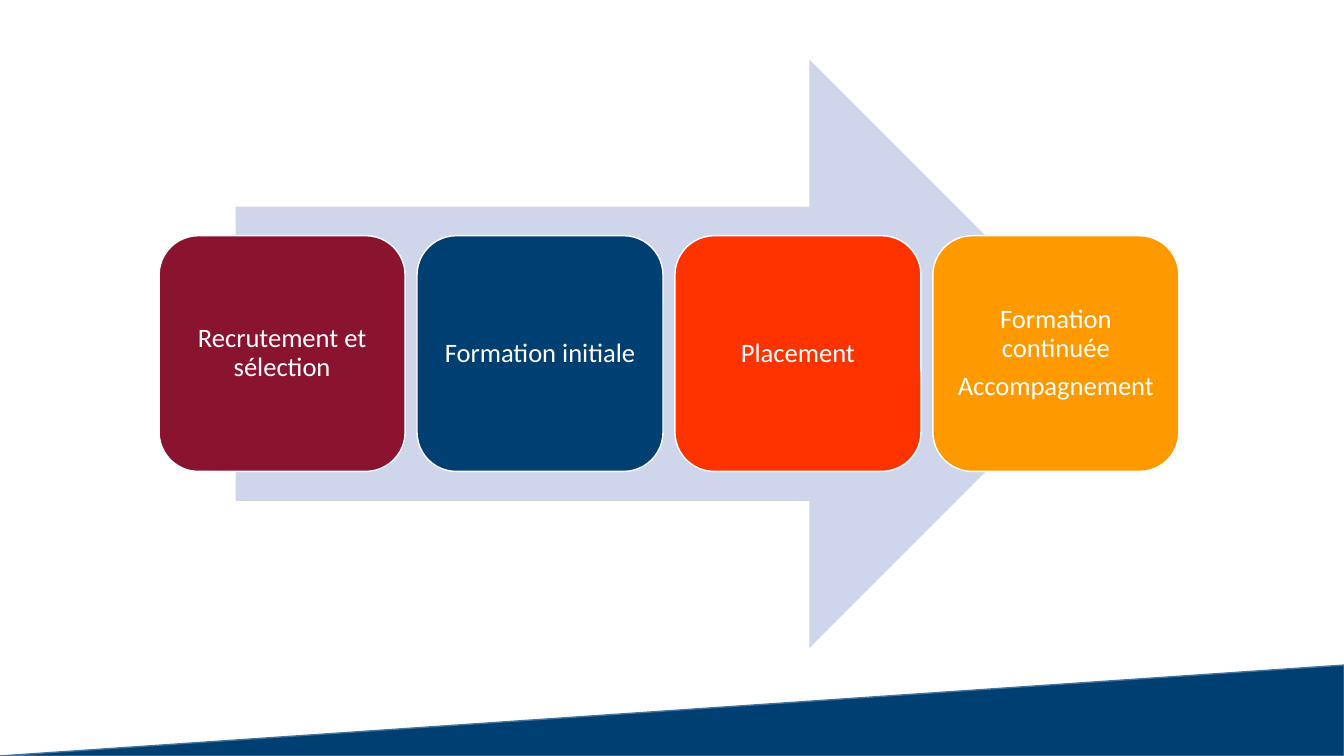
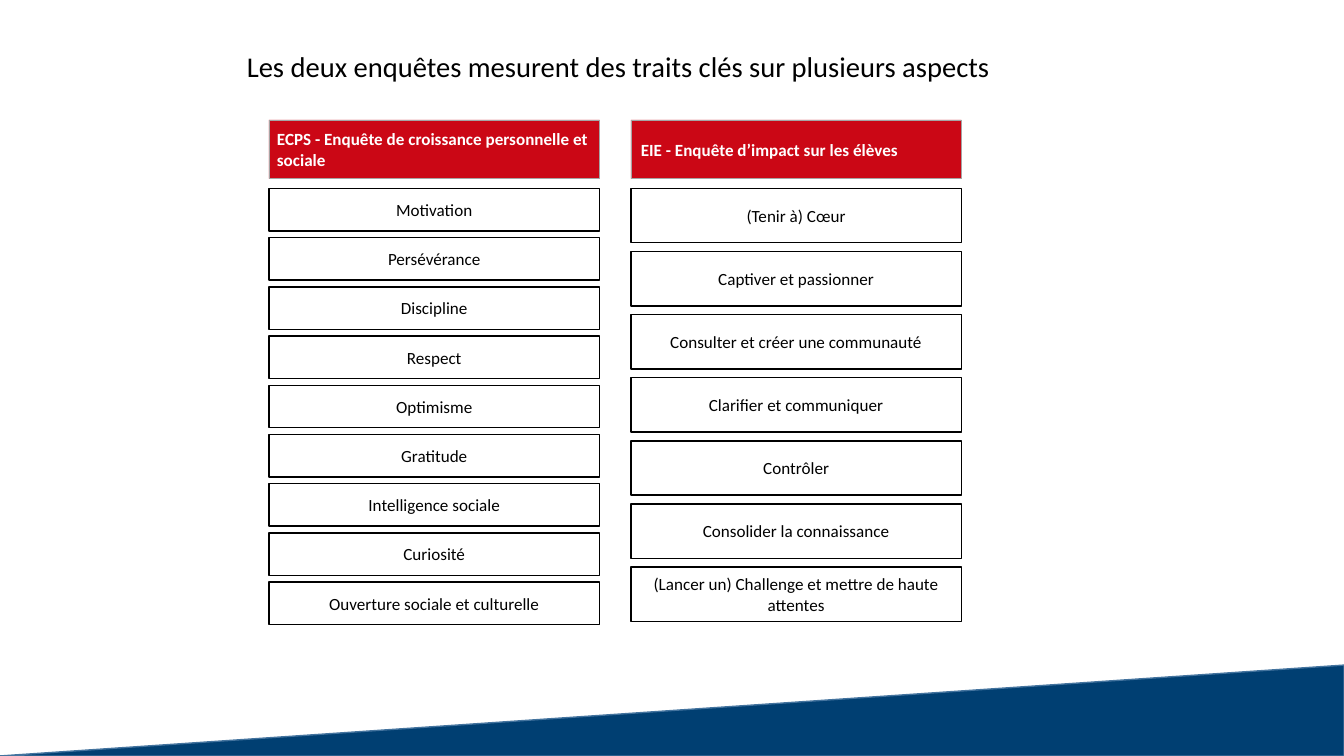
from dataclasses import dataclass

from pptx import Presentation
from pptx.dml.color import RGBColor
from pptx.enum.shapes import MSO_SHAPE as Shape
from pptx.enum.text import MSO_ANCHOR as Anchor, PP_ALIGN as Align
from pptx.util import Cm, Pt

FONT = "Calibri"
NAVY = RGBColor(0x00, 0x3F, 0x72)
BAND_EDGE = RGBColor(0x43, 0x73, 0x9E)
LAVENDER = RGBColor(0xCF, 0xD5, 0xEA)
BURGUNDY = RGBColor(0x8A, 0x13, 0x2F)
VERMILION = RGBColor(0xFF, 0x33, 0x00)
ORANGE = RGBColor(0xFF, 0x99, 0x00)
RED = RGBColor(0xCB, 0x07, 0x15)
GREY = RGBColor(0xA5, 0xA5, 0xA5)
WHITE = RGBColor(0xFF, 0xFF, 0xFF)
BLACK = RGBColor(0x00, 0x00, 0x00)

SLIDE_W, SLIDE_H = 33.87, 19.05
BAND_H = 2.29
STEP_LEFT, STEP_TOP, STEP_W, STEP_H, STEP_PITCH = 4.01, 5.94, 6.2, 5.94, 6.5
COLUMN_W, HEADER_TOP, HEADER_H, ROWS_TOP = 8.33, 3.02, 1.48, 4.75


@dataclass(frozen=True)
class Box:
    """Position and size in centimetres."""
    left: float
    top: float
    width: float
    height: float

    def lengths(self) -> tuple:
        return Cm(self.left), Cm(self.top), Cm(self.width), Cm(self.height)


@dataclass(frozen=True)
class TextStyle:
    size: float
    color: RGBColor
    bold: bool = False
    align: Align = Align.CENTER
    anchor: Anchor = Anchor.MIDDLE
    margins: tuple = (0.2, 0.1, 0.2, 0.1)
    line_spacing: float = 1.0
    space_after: float = 0


@dataclass(frozen=True)
class Step:
    text: str
    color: RGBColor


@dataclass(frozen=True)
class Survey:
    title: str
    left: float
    indent: float
    row_h: float
    pitch: float
    traits: tuple


TITLE_STYLE = TextStyle(20.4, BLACK, align=Align.LEFT, anchor=Anchor.BOTTOM,
                        margins=(0, 0, 0, 0))
STEP_STYLE = TextStyle(19, WHITE, margins=(0.2, 0.2, 0.2, 0.2),
                       line_spacing=0.9, space_after=6.65)
TRAIT_STYLE = TextStyle(12.2, BLACK)

STEPS = (
    Step("Recrutement et sélection", BURGUNDY),
    Step("Formation initiale", NAVY),
    Step("Placement", VERMILION),
    Step("Formation continuée\nAccompagnement", ORANGE),
)
SURVEYS = (
    Survey("ECPS - Enquête de croissance personnelle et sociale",
           6.78, 0.2, 1.07, 1.24,
           ("Motivation", "Persévérance", "Discipline", "Respect", "Optimisme",
            "Gratitude", "Intelligence sociale", "Curiosité",
            "Ouverture sociale et culturelle")),
    Survey("EIE - Enquête d’impact sur les élèves",
           15.9, 0.25, 1.37, 1.59,
           ("(Tenir à) Cœur", "Captiver et passionner",
            "Consulter et créer une communauté", "Clarifier et communiquer",
            "Contrôler", "Consolider la connaissance",
            "(Lancer un) Challenge et mettre de haute attentes")),
)


def set_text(sp, text: str, style: TextStyle) -> None:
    tf = sp.text_frame
    tf.text = text
    tf.word_wrap = True
    tf.vertical_anchor = style.anchor
    (tf.margin_left, tf.margin_top,
     tf.margin_right, tf.margin_bottom) = map(Cm, style.margins)
    for p in tf.paragraphs:
        p.alignment = style.align
        p.line_spacing = style.line_spacing
        p.space_after = Pt(style.space_after)
        for r in p.runs:
            r.font.name = FONT
            r.font.size = Pt(style.size)
            r.font.bold = style.bold
            r.font.color.rgb = style.color


def add_box(s, kind: Shape, box: Box, fill: RGBColor,
            line: RGBColor | None = None, line_w: float = 1):
    sp = s.shapes.add_shape(kind, *box.lengths())
    sp.shadow.inherit = False
    sp.fill.solid()
    sp.fill.fore_color.rgb = fill
    if line is None:
        sp.line.fill.background()
    else:
        sp.line.color.rgb = line
        sp.line.width = Pt(line_w)
    return sp


def add_slide(prs):
    """Add a blank slide with the sloping band along its foot."""
    s = prs.slides.add_slide(prs.slide_layouts[6])
    band = add_box(s, Shape.ISOSCELES_TRIANGLE,
                   Box(0, SLIDE_H - BAND_H, SLIDE_W, BAND_H), NAVY, BAND_EDGE)
    band.adjustments[0] = 1
    return s


def add_step(s, index: int, step: Step) -> None:
    box = Box(STEP_LEFT + index * STEP_PITCH, STEP_TOP, STEP_W, STEP_H)
    sp = add_box(s, Shape.ROUNDED_RECTANGLE, box, step.color, WHITE)
    set_text(sp, step.text, STEP_STYLE)


def add_survey(s, survey: Survey) -> None:
    """Draw a header with its column of evenly spaced traits."""
    header = add_box(s, Shape.RECTANGLE,
                     Box(survey.left, HEADER_TOP, COLUMN_W, HEADER_H),
                     RED, GREY, 0.25)
    set_text(header, survey.title,
             TextStyle(12.2, WHITE, bold=True, align=Align.LEFT,
                       margins=(survey.indent, 0, 0.1, 0)))
    for i, trait in enumerate(survey.traits):
        row = Box(survey.left, ROWS_TOP + i * survey.pitch,
                  COLUMN_W, survey.row_h)
        set_text(add_box(s, Shape.RECTANGLE, row, WHITE, BLACK),
                 trait, TRAIT_STYLE)


def build_process(prs) -> None:
    s = add_slide(prs)
    add_box(s, Shape.RIGHT_ARROW, Box(5.94, 1.5, 21.87, 14.83), LAVENDER)
    for i, step in enumerate(STEPS):
        add_step(s, i, step)


def build_surveys(prs) -> None:
    s = add_slide(prs)
    title = s.shapes.add_textbox(*Box(6.22, 1.17, 20, 0.93).lengths())
    set_text(title,
             "Les deux enquêtes mesurent des traits clés sur plusieurs aspects",
             TITLE_STYLE)
    for survey in SURVEYS:
        add_survey(s, survey)


def main() -> None:
    prs = Presentation()
    prs.slide_width, prs.slide_height = Cm(SLIDE_W), Cm(SLIDE_H)
    build_process(prs)
    build_surveys(prs)
    prs.save("out.pptx")


if __name__ == "__main__":
    main()
